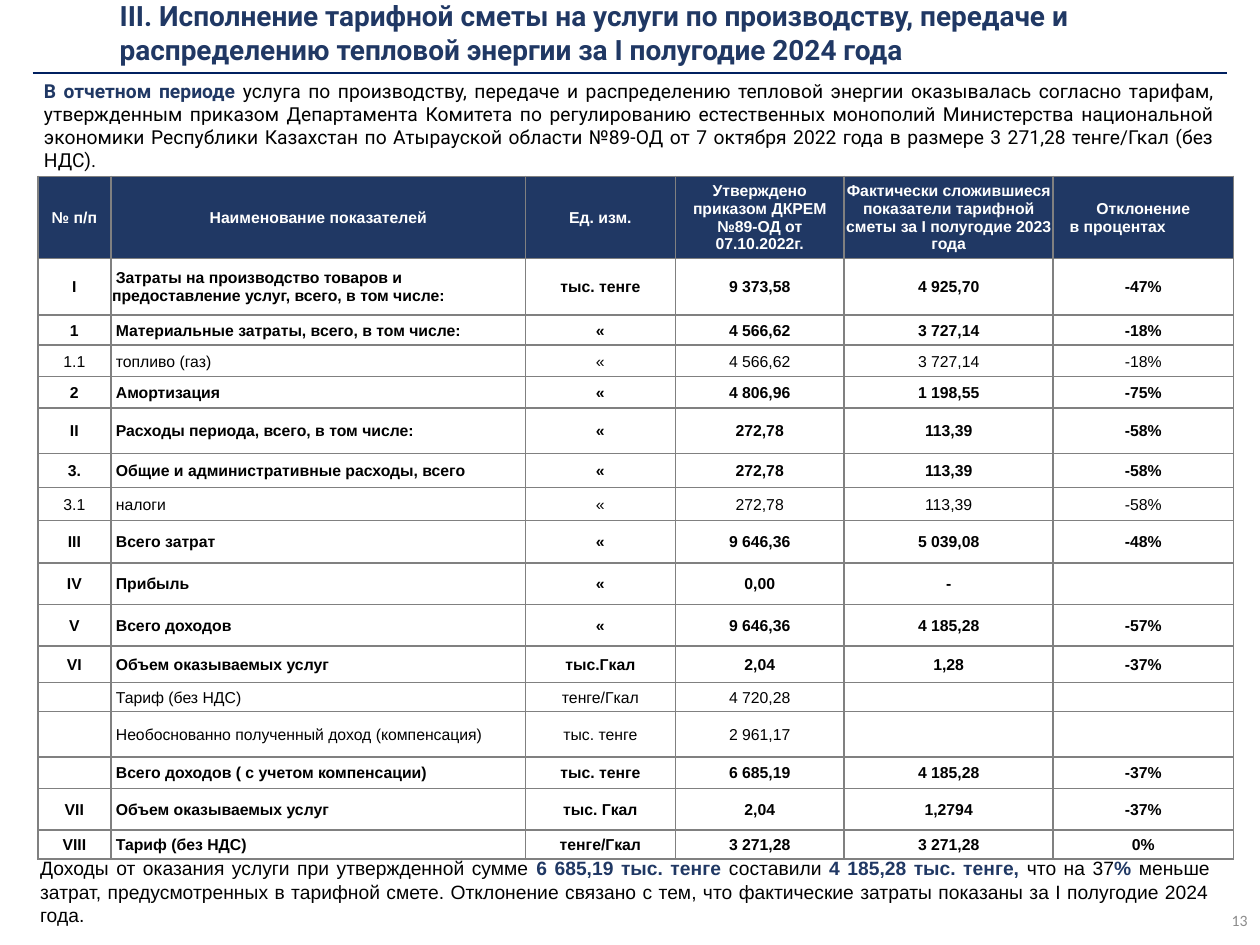
import dataclasses
import pptx
import pptx.dml.color
import pptx.enum.shapes
import pptx.enum.text
import pptx.oxml
import pptx.oxml.ns
import pptx.util
from pptx.util import Inches

ALIGN = pptx.enum.text.PP_ALIGN
ANCHOR = pptx.enum.text.MSO_ANCHOR
FIT = pptx.enum.text.MSO_AUTO_SIZE
NAVY, BLACK, WHITE, GRAY = "203864", "000000", "FFFFFF", "808080"


@dataclasses.dataclass
class Note:
    box: tuple
    text: str
    face: str
    size: int = 11
    tint: str = BLACK
    align: object = ALIGN.JUSTIFY
    anchor: object = ANCHOR.TOP
    fit: object = FIT.SHAPE_TO_FIT_TEXT


@dataclasses.dataclass
class Row:
    high: float
    bold: bool
    cells: tuple


def paint(color, code: str) -> None:
    color.rgb = pptx.dml.color.RGBColor.from_string(code)


def apply(item, form: dict) -> None:
    for key, value in form.items():
        setattr(item, key, value)


def write(para, text: str, face: str, size: int, tint: str, bold: bool = False) -> None:
    for part, words in enumerate(text.split("*")):
        if words:
            mark = part % 2 == 1
            run = para.add_run()
            run.text = words
            apply(run.font, {"name": face, "size": pptx.util.Pt(size), "bold": bold or mark})
            paint(run.font.color, NAVY if mark else tint)


def fill_note(shape, note: Note) -> None:
    left, top, width, height = map(Inches, note.box)
    apply(shape, {"left": left, "top": top, "width": width, "height": height})
    apply(shape.text_frame, {"word_wrap": True, "auto_size": note.fit, "vertical_anchor": note.anchor})
    para = shape.text_frame.paragraphs[0]
    para.alignment = note.align
    write(para, note.text, note.face, note.size, note.tint, note.tint == NAVY)


def add_note(slide, note: Note) -> None:
    fill_note(slide.shapes.add_textbox(0, 0, 0, 0), note)


def edge(cell) -> None:
    props = cell._tc.get_or_add_tcPr()
    space = pptx.oxml.ns.nsdecls("a")
    for place, side in enumerate("LRTB"):
        props.insert(place, pptx.oxml.parse_xml(
            f'<a:ln{side} {space} w="12700"><a:solidFill><a:srgbClr val="{GRAY}"/>'
            f'</a:solidFill></a:ln{side}>'))


def fill_cell(cell, text: str, head: bool, name: bool, bold: bool) -> None:
    slim = Inches(0.01)
    apply(cell, {"margin_left": slim, "margin_right": slim, "margin_top": slim,
                 "margin_bottom": 0, "vertical_anchor": ANCHOR.MIDDLE})
    if head:
        cell.fill.solid()
        paint(cell.fill.fore_color, NAVY)
    else:
        cell.fill.background()
    edge(cell)
    frame = cell.text_frame
    for count, line in enumerate(text.split("\n")):
        para = frame.add_paragraph() if count else frame.paragraphs[0]
        left = name and not head
        para.alignment = ALIGN.LEFT if left else ALIGN.CENTER
        props = para._p.get_or_add_pPr()
        if left:
            props.set("indent", str(Inches(0.03)))
        if count:
            props.set("marR", str(Inches(0.41)))
        write(para, line, "Arial", 9, WHITE if head else BLACK, bold)
        if not line:
            space = pptx.oxml.ns.nsdecls("a")
            para._p.append(pptx.oxml.parse_xml(f'<a:endParaRPr {space} sz="900"/>'))


def add_grid(slide, wide: list, rows: list) -> None:
    high = sum(row.high for row in rows)
    grid = slide.shapes.add_table(len(rows), len(wide), Inches(0.3), Inches(1.4),
                                  Inches(sum(wide)), Inches(high)).table
    grid.horz_banding = False
    for col, width in zip(grid.columns, wide):
        col.width = Inches(width)
    for down, row in enumerate(rows):
        grid.rows[down].height = Inches(row.high)
        for across, text in enumerate(row.cells):
            fill_cell(grid.cell(down, across), text, down == 0, across == 1, row.bold)


def add_rule(slide) -> None:
    level = Inches(0.58)
    rule = slide.shapes.add_connector(pptx.enum.shapes.MSO_CONNECTOR.STRAIGHT,
                                      Inches(0.26), level, Inches(9.74), level)
    rule.line.width = pptx.util.Pt(1)
    paint(rule.line.color, "002060")
    rule._element.spPr.append(pptx.oxml.parse_xml(
        f'<a:effectLst {pptx.oxml.ns.nsdecls("a")}/>'))


WIDE = [0.58, 3.29, 1.19, 1.34, 1.66, 1.43]
ROWS = [
    Row(0.65, True, ("№ п/п", "Наименование показателей", "Ед. изм.",
                     "Утверждено приказом ДКРЕМ №89-ОД от 07.10.2022г.",
                     "Фактически сложившиеся показатели тарифной сметы за I полугодие 2023 года",
                     "Отклонение\nв процентах")),
    Row(0.45, True, ("I", "Затраты на производство товаров и предоставление услуг, всего, в том числе:",
                     "тыс. тенге", "9 373,58", "4 925,70", "-47%")),
    Row(0.24, True, ("1", "Материальные затраты, всего, в том числе:", "«", "4 566,62", "3 727,14", "-18%")),
    Row(0.25, False, ("1.1", "топливо (газ)", "«", "4 566,62", "3 727,14", "-18%")),
    Row(0.25, True, ("2", "Амортизация", "«", "4 806,96", "1 198,55", "-75%")),
    Row(0.36, True, ("II", "Расходы периода, всего, в том числе:", "«", "272,78", "113,39", "-58%")),
    Row(0.27, True, ("3.", "Общие и административные расходы, всего", "«", "272,78", "113,39", "-58%")),
    Row(0.26, False, ("3.1", "налоги", "«", "272,78", "113,39", "-58%")),
    Row(0.34, True, ("III", "Всего затрат", "«", "9 646,36", "5 039,08", "-48%")),
    Row(0.33, True, ("IV", "Прибыль", "«", "0,00", "-", "")),
    Row(0.33, True, ("V", "Всего доходов", "«", "9 646,36", "4 185,28", "-57%")),
    Row(0.29, True, ("VI", "Объем оказываемых услуг", "тыс.Гкал", "2,04", "1,28", "-37%")),
    Row(0.23, False, ("", "Тариф (без НДС)", "тенге/Гкал", "4 720,28", "", "")),
    Row(0.36, False, ("", "Необоснованно полученный доход (компенсация)", "тыс. тенге", "2 961,17", "", "")),
    Row(0.25, True, ("", "Всего доходов ( с учетом компенсации)", "тыс. тенге", "6 685,19", "4 185,28", "-37%")),
    Row(0.33, True, ("VII", "Объем оказываемых услуг", "тыс. Гкал", "2,04", "1,2794", "-37%")),
    Row(0.23, True, ("VIII", "Тариф (без НДС)", "тенге/Гкал", "3 271,28", "3 271,28", "0%")),
]
TITLE = Note((0.85, -0.03, 8.93, 0.57),
             "III. Исполнение тарифной сметы на услуги по производству, передаче и "
             "распределению тепловой энергии за I полугодие 2024 года",
             "Roboto", 16, NAVY, ALIGN.LEFT, ANCHOR.MIDDLE, FIT.NONE)
NOTES = [
    Note((0.22, 6.75, 9.48, 0.7),
         "Доходы от оказания услуги при утвержденной сумме *6 685,19 тыс. тенге *составили "
         "*4 185,28 тыс. тенге, *что на 37*% *меньше затрат, предусмотренных в тарифной смете. "
         "Отклонение связано с тем, что фактические затраты показаны за I полугодие 2024 года.",
         "Arial"),
    Note((7.75, 7.1, 2.25, 0.4), "13", "Calibri", 9, "8C8C8C", ALIGN.RIGHT, ANCHOR.MIDDLE, FIT.NONE),
    Note((0.25, 0.58, 9.49, 0.84),
         "*В отчетном периоде *услуга по производству, передаче и распределению тепловой энергии "
         "оказывалась согласно тарифам, утвержденным приказом Департамента Комитета по "
         "регулированию естественных монополий Министерства национальной экономики Республики "
         "Казахстан по Атырауской области №89-ОД от 7 октября 2022 года в размере "
         "3 271,28 тенге/Гкал (без НДС).",
         "Roboto"),
]

deck = pptx.Presentation()
apply(deck, {"slide_width": Inches(10), "slide_height": Inches(7.5)})
slide = deck.slides.add_slide(deck.slide_layouts[5])
fill_note(slide.shapes.title, TITLE)
add_grid(slide, WIDE, ROWS)
add_rule(slide)
for note in NOTES:
    add_note(slide, note)
deck.save("out.pptx")
